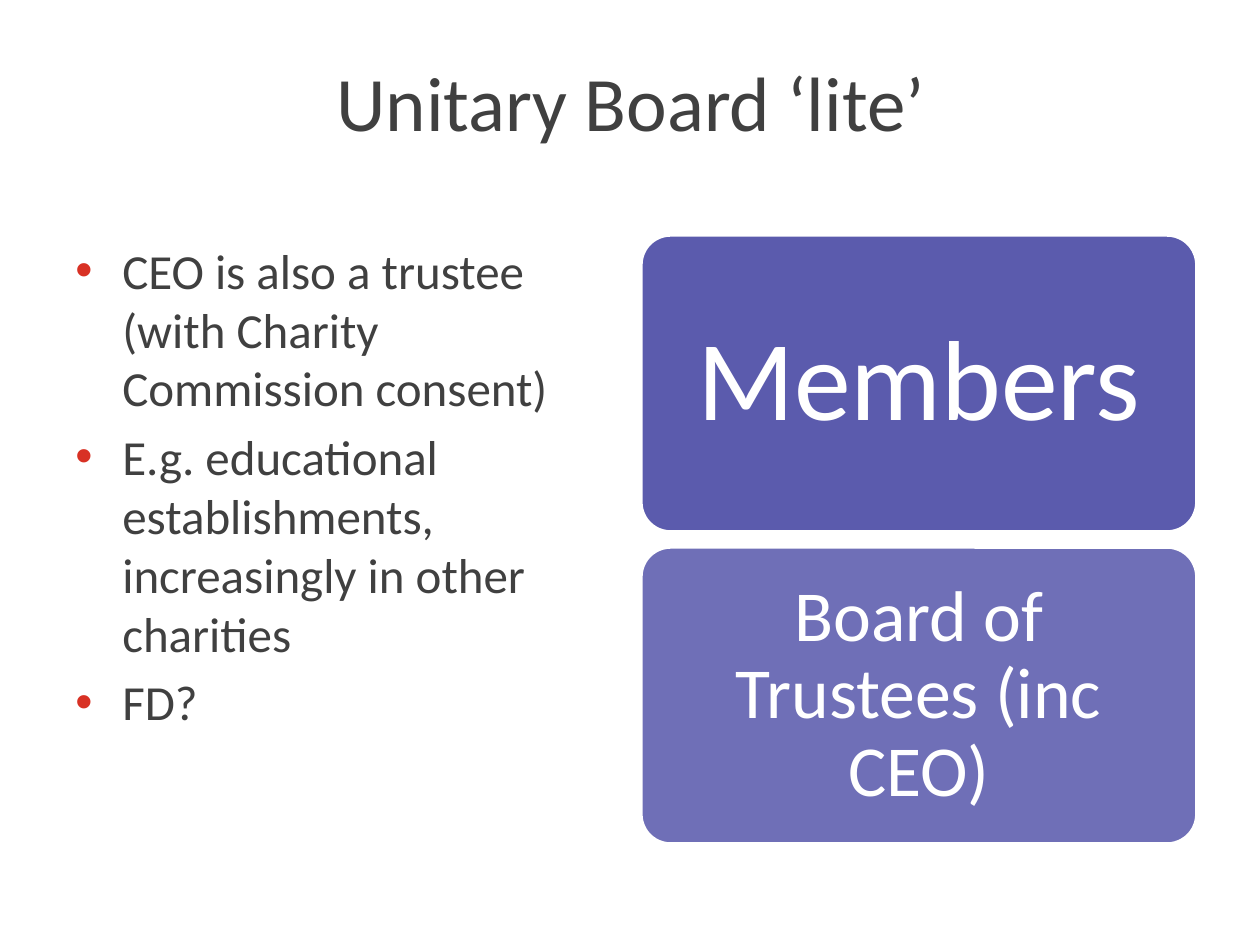
import pptx
import pptx.util
import pptx.dml.color
import pptx.enum.shapes
import pptx.enum.text
import pptx.oxml
import pptx.oxml.ns
import lxml.etree

RGB = pptx.dml.color.RGBColor
GREY = RGB(0x40, 0x40, 0x40)
WHITE = RGB(0xFF, 0xFF, 0xFF)
NAVY = RGB(0x33, 0x33, 0x99)
RED = RGB(0xD8, 0x31, 0x24)
SCALE = 914400 // 126
ALIGN = pptx.enum.text.PP_ALIGN
ANCHOR = pptx.enum.text.MSO_ANCHOR


def px(size):
    return pptx.util.Emu(size * SCALE)


def add_tag(parent, tag, **attrs):
    return lxml.etree.SubElement(parent, pptx.oxml.ns.qn(tag), **attrs)


class Deck:
    """Holds the style and the current slide."""

    def __init__(self, font):
        self.font = font
        self.show = pptx.Presentation()
        self.show.slide_width = pptx.util.Inches(10)
        self.show.slide_height = pptx.util.Inches(7.5)
        self.slide = self.show.slides.add_slide(self.show.slide_layouts[6])

    def style(self, para, size, color):
        for run in para.runs:
            run.font.name = self.font
            run.font.size = pptx.util.Pt(size)
            run.font.color.rgb = color

    def box(self, left, top, width, height):
        shape = self.slide.shapes.add_textbox(*map(px, (left, top, width, height)))
        shape.text_frame.word_wrap = True
        return shape.text_frame

    def title(self, text, left, top, width, height):
        frame = self.box(left, top, width, height)
        frame.vertical_anchor = ANCHOR.MIDDLE
        frame.text = text
        para = frame.paragraphs[0]
        para.alignment = ALIGN.CENTER
        self.style(para, 44, GREY)

    def bullets(self, items, left, top, width, height):
        frame = self.box(left, top, width, height)
        frame.text = "\n".join(items)
        for index, para in enumerate(frame.paragraphs):
            if index:
                para.space_before = pptx.util.Pt(5.6)
            props = para._p.get_or_add_pPr()
            props.set("marL", str(px(47)))
            props.set("indent", str(-px(47)))
            color = add_tag(props, "a:buClr")
            add_tag(color, "a:srgbClr", val=str(RED))
            add_tag(props, "a:buFont", typeface="Arial")
            add_tag(props, "a:buChar", char="•")
            self.style(para, 28, GREY)

    def card(self, text, left, top, width, height, size, inset, alpha):
        kind = pptx.enum.shapes.MSO_SHAPE.ROUNDED_RECTANGLE
        shape = self.slide.shapes.add_shape(kind, *map(px, (left, top, width, height)))
        shape.adjustments[0] = 0.1
        shape.shadow.inherit = False
        shape.fill.solid()
        shape.fill.fore_color.rgb = NAVY
        color = shape._element.spPr.find(".//" + pptx.oxml.ns.qn("a:srgbClr"))
        add_tag(color, "a:alpha", val=str(alpha * 1000))
        shape.line.color.rgb = WHITE
        shape.line.width = pptx.util.Pt(2)
        frame = shape.text_frame
        frame.word_wrap = True
        frame.vertical_anchor = ANCHOR.MIDDLE
        frame.margin_left = frame.margin_right = px(inset)
        frame.margin_top = frame.margin_bottom = px(inset)
        frame.text = text
        para = frame.paragraphs[0]
        para.alignment = ALIGN.CENTER
        para.line_spacing = 0.9
        self.style(para, size, WHITE)


def main():
    deck = Deck("Calibri")
    deck.title("Unitary Board ‘lite’", 64, 16, 1134, 169)
    deck.bullets(
        [
            "CEO is also a trustee (with Charity Commission consent)",
            "E.g. educational establishments, increasingly in other charities",
            "FD?",
        ],
        63, 234, 557, 610,
    )
    cards = [("Members", 65, 34, 80), ("Board of Trustees (inc CEO)", 41, 21, 70)]
    for row, (text, size, inset, alpha) in enumerate(cards):
        deck.card(text, 641, 235 + row * 312, 556, 297, size, inset, alpha)
    deck.show.save("out.pptx")


if __name__ == "__main__":
    main()
